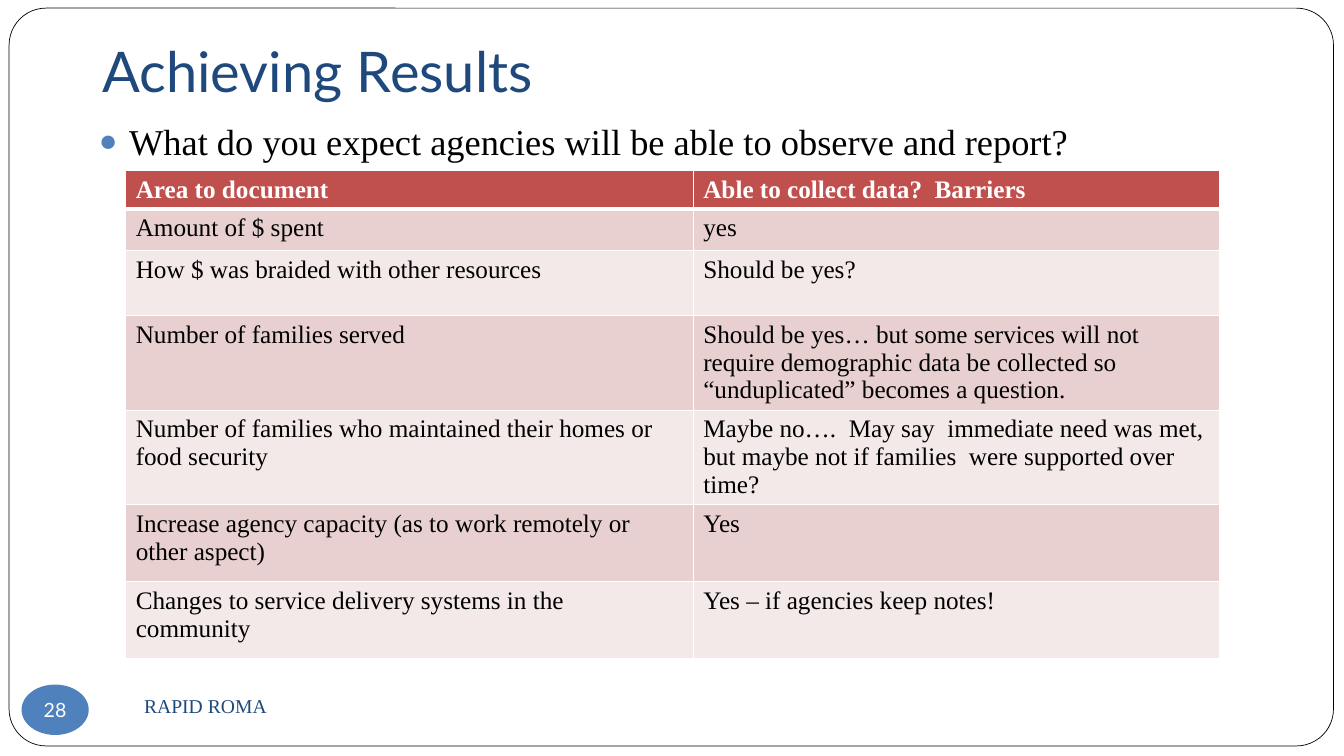
from lxml import etree
from pptx import Presentation, oxml
from pptx import util as u
from pptx.dml import color
from pptx.enum import shapes, text
from pptx.oxml import ns

HUES = {"navy": "1F497D", "blue": "4F81BD", "red": "C0504D", "rose": "E8D0D0",
        "pale": "F4E9E9", "white": "FFFFFF", "black": "000000"}
SERIF, SANS = "Times New Roman", "Lato"


def rgb(hue):
    return color.RGBColor.from_string(HUES[hue])


def write(frame, words, hue, font, **form):
    """Fill a text frame: font takes run values, form takes frame values."""
    for key, val in {"word_wrap": True, **form}.items():
        setattr(frame, key, val)
    para = frame.paragraphs[0]
    para.alignment = text.PP_ALIGN.LEFT
    run = para.add_run()
    run.text = words
    for key, val in font.items():
        setattr(run.font, key, val)
    run.font.color.rgb = rgb(hue)
    return para


deck = Presentation()
deck.slide_width, deck.slide_height = u.Pt(960), u.Pt(540)
slide = deck.slides.add_slide(deck.slide_layouts[1])
title, body = slide.placeholders[0], slide.placeholders[1]
MID = text.MSO_ANCHOR.MIDDLE

# Rounded frame, behind everything
card = slide.shapes.add_shape(shapes.MSO_SHAPE.ROUNDED_RECTANGLE,
                              u.Pt(6.5), u.Pt(5.8), u.Pt(946), u.Pt(527))
card.adjustments[0] = 0.05
card.shadow.inherit = False
card.fill.solid()
card.fill.fore_color.rgb = rgb("white")
card.line.color.rgb = rgb("black")
card.line.width = u.Pt(0.5)
slide.shapes.element.insert(2, card.element)

# Title and question
spots = [(title, (66, 0, 828, 81.4)), (body, (63.4, 81.4, 828, 383))]
for shape, spot in spots:
    for side, val in zip(("left", "top", "width", "height"), spot):
        setattr(shape, side, u.Pt(val))
write(title.text_frame, "Achieving Results", "navy", {"name": SANS, "size": u.Pt(40)},
      vertical_anchor=text.MSO_ANCHOR.BOTTOM, margin_bottom=u.Pt(7.2))
ask = write(body.text_frame, "What do you expect agencies will be able to observe and report?",
            "black", {"name": SERIF, "size": u.Pt(26)})
ask.space_before = u.Pt(5.8)
props = ask._p.get_or_add_pPr()
props.set("marL", str(u.Pt(21.6)))
props.set("indent", str(u.Pt(-21.6)))
tint = etree.SubElement(props, ns.qn("a:buClr"))
etree.SubElement(tint, ns.qn("a:srgbClr"), val=HUES["blue"])
etree.SubElement(props, ns.qn("a:buSzPct"), val="85000")
etree.SubElement(props, ns.qn("a:buChar"), char="●")

# Table of areas
ROWS = [
    ("Area to document", "Able to collect data?  Barriers", 27.4),
    ("Amount of $ spent", "yes", 30),
    ("How $ was braided with other resources", "Should be yes?", 46.3),
    ("Number of families served",
     "Should be yes… but some services will not require demographic data be collected "
     "so “unduplicated” becomes a question.", 67.6),
    ("Number of families who maintained their homes or food security",
     "Maybe no….  May say  immediate need was met, but maybe not if families  were "
     "supported over time?", 67.6),
    ("Increase agency capacity (as to work remotely or other aspect)", "Yes", 55),
    ("Changes to service delivery systems in the community",
     "Yes – if agencies keep notes!", 55),
]
grid = slide.shapes.add_table(len(ROWS), 2, u.Pt(89.8), u.Pt(121.8), u.Pt(781.2),
                              u.Pt(sum(row[2] for row in ROWS))).table
for col, wide in zip(grid.columns, (405.4, 375.8)):
    col.width = u.Pt(wide)
for r, (*words, high) in enumerate(ROWS):
    grid.rows[r].height = u.Pt(high)
    head = r == 0
    for c, word in enumerate(words):
        cell = grid.cell(r, c)
        cell.fill.solid()
        cell.fill.fore_color.rgb = rgb("red" if head else "rose" if r % 2 else "pale")
        write(cell.text_frame, word, "white" if head else "black",
              {"name": SERIF, "size": u.Pt(18), "bold": head})
        wides = {"L": 1, "R": 1, "T": 3 if r == 1 else 1, "B": 3 if head else 1}
        for i, (side, wide) in enumerate(wides.items()):
            edge = oxml.parse_xml(
                f'<a:ln{side} {ns.nsdecls("a")} w="{u.Pt(wide)}"><a:solidFill>'
                f'<a:srgbClr val="{HUES["white"]}"/></a:solidFill></a:ln{side}>')
            cell._tc.get_or_add_tcPr().insert(i, edge)

# Footer and page number
foot = slide.shapes.add_textbox(u.Pt(95.8), u.Pt(486), u.Pt(416), u.Pt(36))
write(foot.text_frame, "RAPID ROMA", "navy", {"name": SERIF, "size": u.Pt(14)},
      vertical_anchor=MID)
disc = slide.shapes.add_shape(shapes.MSO_SHAPE.OVAL,
                              u.Pt(15.4), u.Pt(489), u.Pt(48), u.Pt(36))
disc.shadow.inherit = False
disc.fill.solid()
disc.fill.fore_color.rgb = rgb("blue")
disc.line.fill.background()
page = write(disc.text_frame, "28", "white", {"name": SANS, "size": u.Pt(14)},
             word_wrap=False, vertical_anchor=MID, margin_left=0, margin_right=0,
             margin_top=0, margin_bottom=0)
page.alignment = text.PP_ALIGN.CENTER

deck.save("out.pptx")
